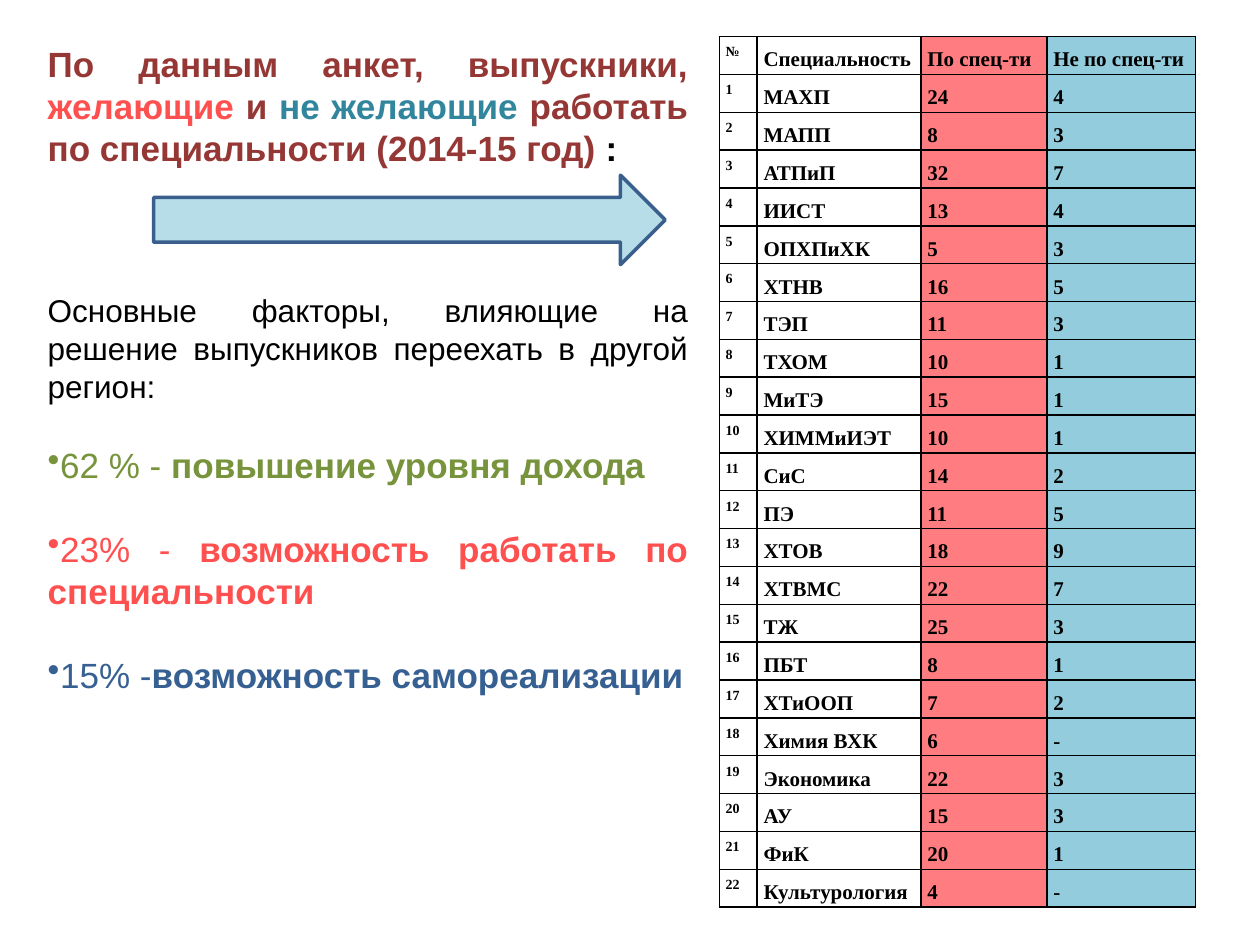
"""Build a slide on graduates' plans to work in their specialty."""
from lxml.etree import SubElement
from pptx import Presentation
from pptx.dml.color import RGBColor
from pptx.enum.shapes import MSO_SHAPE
from pptx.enum.text import PP_ALIGN
from pptx.oxml.ns import qn
from pptx.util import Inches, Pt

BLACK = RGBColor(0x00, 0x00, 0x00)
MAROON = RGBColor(0x95, 0x37, 0x35)
RED = RGBColor(0xFF, 0x50, 0x50)
TEAL = RGBColor(0x31, 0x85, 0x9C)
GREEN = RGBColor(0x77, 0x93, 0x3C)
BLUE = RGBColor(0x37, 0x60, 0x92)
PINK = RGBColor(0xFF, 0x7C, 0x80)
SKY = RGBColor(0x93, 0xCD, 0xDD)
PALE_BLUE = RGBColor(0xB7, 0xDE, 0xE8)
ARROW_EDGE = RGBColor(0x3A, 0x5F, 0x8C)


def style(run, font_name, size, color, bold):
    run.font.name = font_name
    run.font.size = Pt(size)
    run.font.color.rgb = color
    run.font.bold = bold


def add_borders(cell):
    properties = cell._tc.get_or_add_tcPr()
    for position, side in enumerate(("a:lnL", "a:lnR", "a:lnT", "a:lnB")):
        line = properties.makeelement(qn(side), {"w": str(Pt(1))})
        fill = SubElement(line, qn("a:solidFill"))
        SubElement(fill, qn("a:srgbClr"), val=str(BLACK))
        properties.insert(position, line)


prs = Presentation()
prs.slide_width, prs.slide_height = Inches(10), Inches(7.5)
slide = prs.slides.add_slide(prs.slide_layouts[6])

summary = slide.shapes.add_textbox(Inches(0.28), Inches(0.29), Inches(5.28), Inches(5.32)).text_frame
summary.word_wrap = True
paragraphs = [
    (False, 0, 20, [
        ("По данным анкет, выпускники, ", MAROON, True),
        ("желающие ", RED, True),
        ("и ", MAROON, True),
        ("не желающие ", TEAL, True),
        ("работать по специальности (2014-15 год) ", MAROON, True),
        (":", BLACK, True),
    ]),
    (False, 70, 18, [
        ("Основные факторы, влияющие на решение выпускников переехать в другой регион:", BLACK, False),
    ]),
    (True, 22, 20, [("62 % - ", GREEN, False), ("повышение уровня дохода", GREEN, True)]),
    (True, 24, 20, [("23% - ", RED, False), ("возможность работать по специальности", RED, True)]),
    (True, 24, 20, [("15% -", BLUE, False), ("возможность самореализации", BLUE, True)]),
]
for number, (bulleted, gap, size, pieces) in enumerate(paragraphs):
    paragraph = summary.add_paragraph() if number else summary.paragraphs[0]
    paragraph.alignment = PP_ALIGN.JUSTIFY
    paragraph.space_before = Pt(gap)
    if bulleted:
        SubElement(paragraph._p.get_or_add_pPr(), qn("a:buChar"), char="•")
    for words, color, bold in pieces:
        run = paragraph.add_run()
        run.text = words
        style(run, "Arial", size, color, bold)
summary.paragraphs[-1].alignment = PP_ALIGN.LEFT

header = ("№", "Специальность", "По спец-ти", "Не по спец-ти")
specialties = [
    ("МАХП", 24, 4), ("МАПП", 8, 3), ("АТПиП", 32, 7), ("ИИСТ", 13, 4),
    ("ОПХПиХК", 5, 3), ("ХТНВ", 16, 5), ("ТЭП", 11, 3), ("ТХОМ", 10, 1),
    ("МиТЭ", 15, 1), ("ХИММиИЭТ", 10, 1), ("СиС", 14, 2), ("ПЭ", 11, 5),
    ("ХТОВ", 18, 9), ("ХТВМС", 22, 7), ("ТЖ", 25, 3), ("ПБТ", 8, 1),
    ("ХТиООП", 7, 2), ("Химия ВХК", 6, "-"), ("Экономика", 22, 3),
    ("АУ", 15, 3), ("ФиК", 20, 1), ("Культурология", 4, "-"),
]
rows = [header] + [(number, *entry) for number, entry in enumerate(specialties, 1)]
columns = [(0.3, 8, None), (1.3, 12, None), (1, 12, PINK), (1.18, 12, SKY)]

survey = slide.shapes.add_table(
    len(rows), len(columns), Inches(5.71), Inches(0.29), Inches(3.78), Inches(0.3 * len(rows))
).table
survey.horz_banding = False
survey.first_row = False
for column, (width, _, _) in zip(survey.columns, columns):
    column.width = Inches(width)
for row, values in enumerate(rows):
    survey.rows[row].height = Inches(0.3)
    for col, (value, (_, size, color)) in enumerate(zip(values, columns)):
        cell = survey.cell(row, col)
        cell.margin_left = cell.margin_right = Inches(0.05)
        cell.margin_top = cell.margin_bottom = Inches(0)
        if color is None:
            cell.fill.background()
        else:
            cell.fill.solid()
            cell.fill.fore_color.rgb = color
        add_borders(cell)
        paragraph = cell.text_frame.paragraphs[0]
        paragraph.text = str(value)
        paragraph.alignment = PP_ALIGN.JUSTIFY
        paragraph.line_spacing = 1.5
        style(paragraph.runs[0], "Times New Roman", size, BLACK, True)

arrow = slide.shapes.add_shape(
    MSO_SHAPE.RIGHT_ARROW, Inches(1.22), Inches(1.39), Inches(4.06), Inches(0.71)
)
arrow.shadow.inherit = False
arrow.fill.solid()
arrow.fill.fore_color.rgb = PALE_BLUE
arrow.line.color.rgb = ARROW_EDGE
arrow.line.width = Pt(2)

prs.save("out.pptx")
